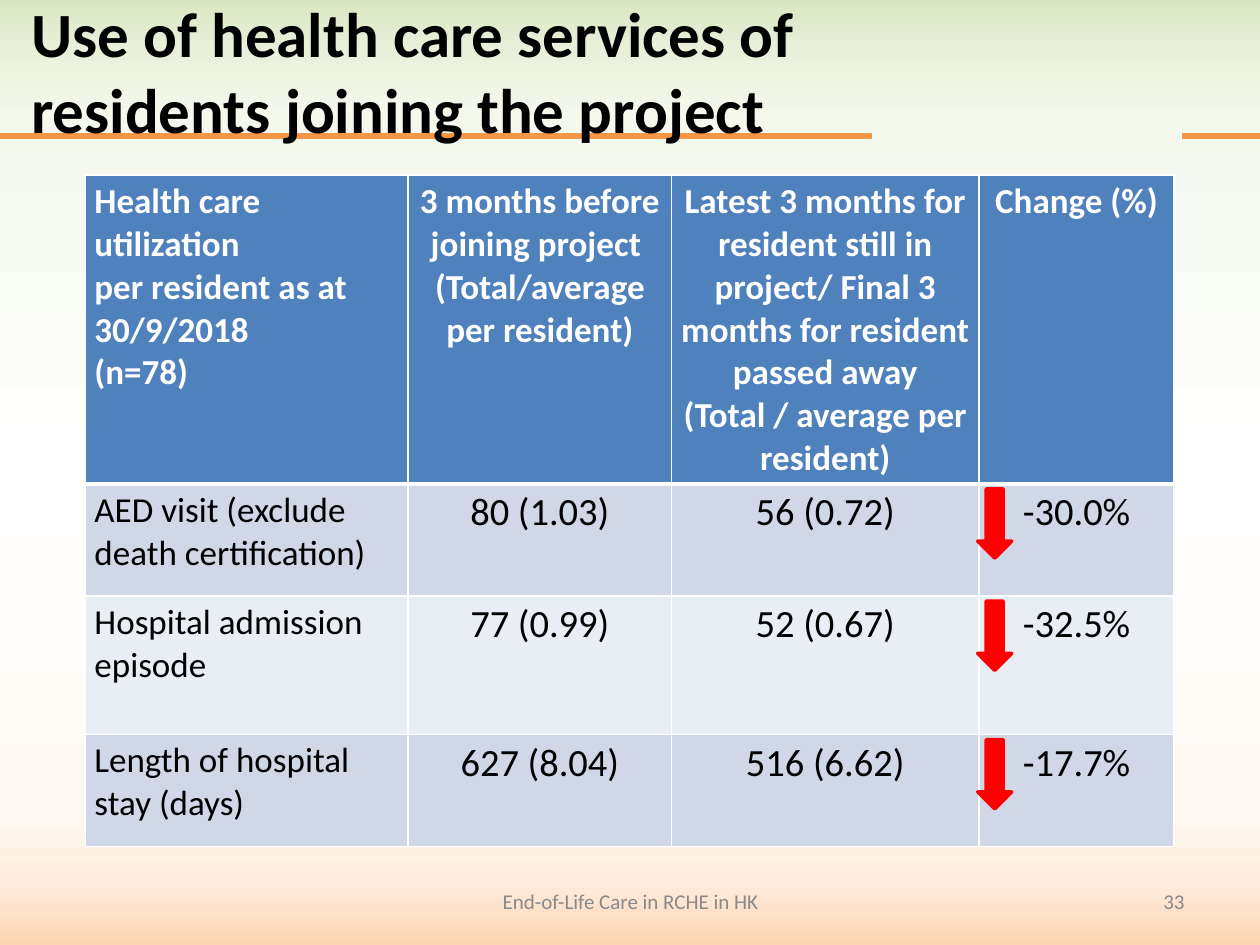
from lxml import etree
from pptx import Presentation
from pptx.dml.color import RGBColor
from pptx.enum.shapes import MSO_CONNECTOR, MSO_SHAPE
from pptx.enum.text import MSO_ANCHOR, PP_ALIGN
from pptx.oxml.ns import qn
from pptx.util import Inches, Pt

LEFT, CENTER, RIGHT = PP_ALIGN.LEFT, PP_ALIGN.CENTER, PP_ALIGN.RIGHT
MIDDLE = MSO_ANCHOR.MIDDLE
RECT, DOWN_ARROW = MSO_SHAPE.RECTANGLE, MSO_SHAPE.DOWN_ARROW
STRAIGHT = MSO_CONNECTOR.STRAIGHT

COLORS = {
    "black": "000000", "white": "FFFFFF", "gray": "898989",
    "orange": "F79646", "red": "FF0000", "header": "4F81BD",
    "band_dark": "D0D8E8", "band_light": "E9EDF4",
}
GRADIENT = [(0, "FCD5B5"), (7, "FEEDDF"), (14, "FFF9F4"), (50, "FFFFFF"),
            (87, "F4F8ED"), (94, "E8F0D9"), (100, "D7E4BD")]

prs = Presentation()
prs.slide_width, prs.slide_height = Inches(10), Inches(7.5)
W, H = prs.slide_width, prs.slide_height
slide = prs.slides.add_slide(prs.slide_layouts[6])
shapes = slide.shapes


def rgb(name):
    return RGBColor.from_string(COLORS[name])


def write(tf, text, size=20, color="black", bold=False, align=LEFT):
    tf.word_wrap = True
    for i, line in enumerate(text.split("\n")):
        p = tf.paragraphs[0] if i == 0 else tf.add_paragraph()
        p.alignment = align
        r = p.add_run()
        r.text = line
        r.font.name, r.font.size, r.font.bold = "Calibri", Pt(size), bold
        r.font.color.rgb = rgb(color)


s = shapes.add_shape(RECT, 0, int(-0.01 * H), W, int(1.01 * H))
s.shadow.inherit = False
s.line.fill.background()
s.fill.gradient()
s.fill.gradient_angle = 90
stops = s._element.spPr.find(qn("a:gradFill")).find(qn("a:gsLst"))
for gs in list(stops):
    stops.remove(gs)
for share, color in GRADIENT:
    gs = etree.SubElement(stops, qn("a:gs"), pos=str(share * 1000))
    etree.SubElement(gs, qn("a:srgbClr"), val=color)

rule_y = int(0.144 * H)
for start, end in [(0.938, 1), (0, 0.692)]:
    s = shapes.add_connector(STRAIGHT, int(start * W), rule_y, int(end * W), rule_y)
    s.line.color.rgb = rgb("orange")
    s.line.width = Pt(3)
    etree.SubElement(s._element.spPr, qn("a:effectLst"))

texts = [
    ("Use of health care services of residents joining the project",
     (0.015, 0.012, 0.701, 0.125), dict(size=36, bold=True)),
    ("End-of-Life Care in RCHE in HK",
     (0.342, 0.927, 0.317, 0.053), dict(size=12, color="gray", align=CENTER)),
    ("33", (0.717, 0.927, 0.233, 0.053), dict(size=12, color="gray", align=RIGHT)),
]
for text, (x, y, w, h), style in texts:
    tf = shapes.add_textbox(int(x * W), int(y * H), int(w * W), int(h * H)).text_frame
    tf.vertical_anchor = MIDDLE
    write(tf, text, **style)

rows = [
    ["Health care utilization\nper resident as at 30/9/2018\n(n=78)",
     "3 months before joining project \n(Total/average per resident)",
     "Latest 3 months for resident still in project/ Final 3 months for resident "
     "passed away\n(Total / average per resident)",
     "Change (%)"],
    ["AED visit (exclude death certification)", "80 (1.03)", "56 (0.72)", "-30.0%"],
    ["Hospital admission episode", "77 (0.99)", "52 (0.67)", "-32.5%"],
    ["Length of hospital stay (days)", "627 (8.04)", "516 (6.62)", "-17.7%"],
]
col_widths = [Inches(v) for v in (2.56, 2.09, 2.44, 1.55)]
row_heights = [Inches(v) for v in (2.45, 0.89, 1.1, 0.89)]
left, top = Inches(0.68), Inches(1.39)
table = shapes.add_table(len(rows), len(col_widths), left, top,
                         sum(col_widths), sum(row_heights)).table
for col, width in zip(table.columns, col_widths):
    col.width = width
for row, height in zip(table.rows, row_heights):
    row.height = height

for i, row in enumerate(rows):
    fill = "header" if i == 0 else "band_dark" if i % 2 else "band_light"
    for j, text in enumerate(row):
        cell = table.cell(i, j)
        cell.margin_left = cell.margin_right = Inches(0.07)
        cell.margin_top = cell.margin_bottom = Inches(0.04)
        tcPr = cell._tc.get_or_add_tcPr()
        for side in "LRTB":
            thick = (i, side) in [(0, "B"), (1, "T")]
            ln = etree.SubElement(tcPr, qn(f"a:ln{side}"), w=str(Pt(3 if thick else 1)))
            line_fill = etree.SubElement(ln, qn("a:solidFill"))
            etree.SubElement(line_fill, qn("a:srgbClr"), val=COLORS["white"])
        cell.fill.solid()
        cell.fill.fore_color.rgb = rgb(fill)
        write(cell.text_frame, text, size=22 if i and j else 20,
              color="black" if i else "white", bold=i == 0,
              align=CENTER if j else LEFT)

for i in range(1, len(rows)):
    y = top + sum(row_heights[:i]) + Inches(0.04)
    s = shapes.add_shape(DOWN_ARROW, int(0.776 * W), y, Inches(0.27), Inches(0.55))
    s.shadow.inherit = False
    s.fill.solid()
    s.fill.fore_color.rgb = rgb("red")
    s.line.color.rgb = rgb("red")
    s.line.width = Pt(2)

prs.save("out.pptx")
